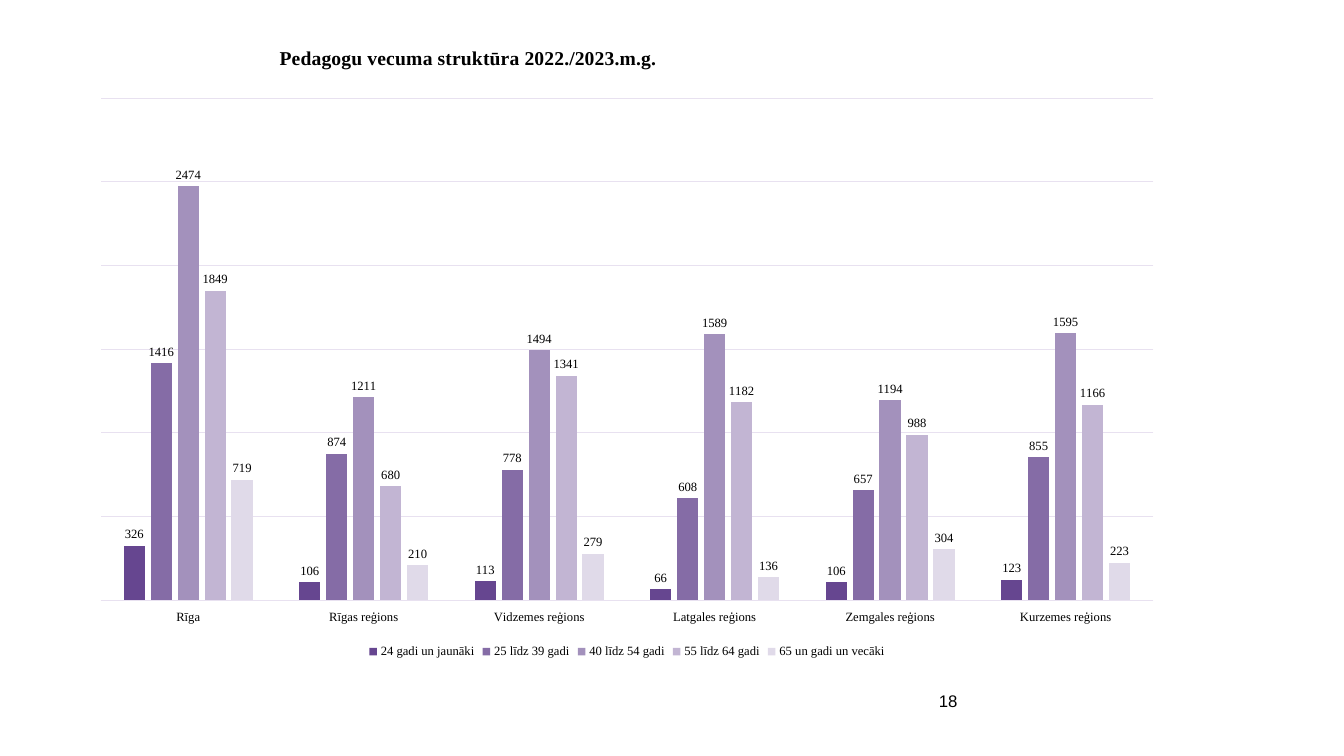
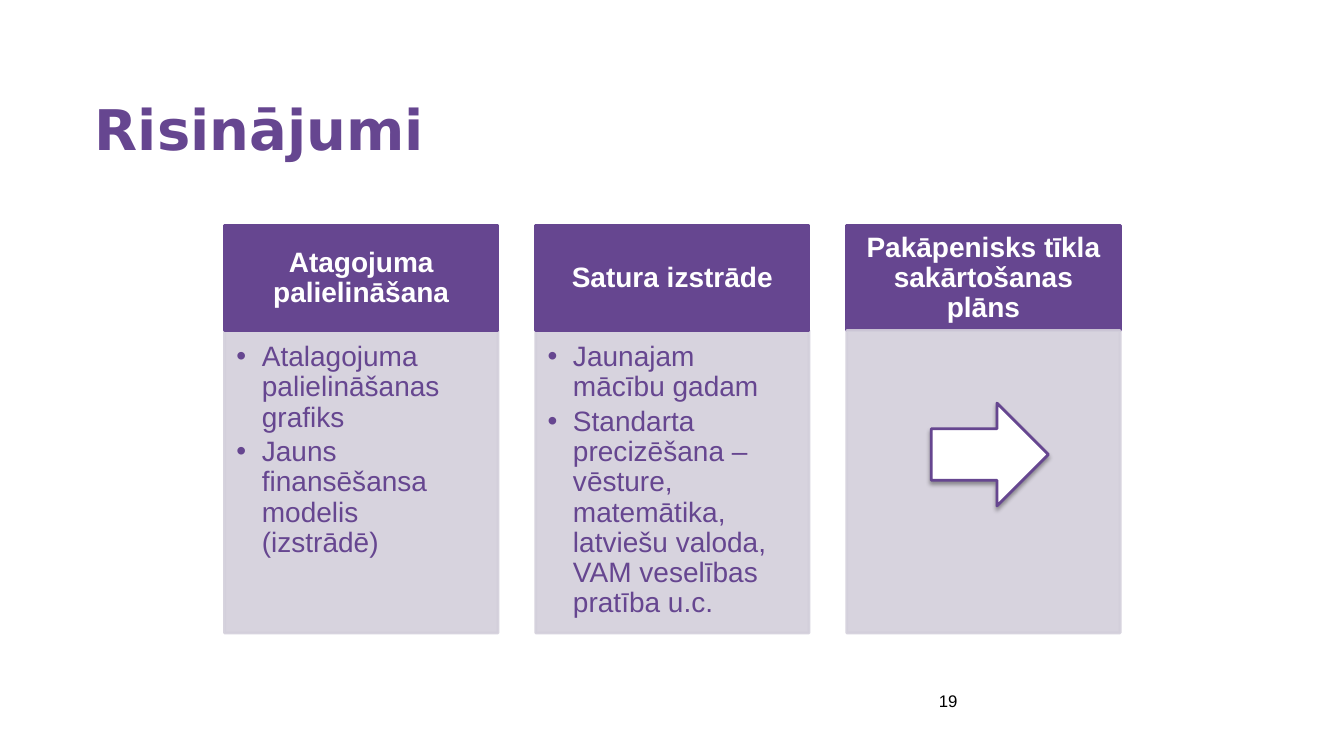
from dataclasses import dataclass

from lxml import etree
from pptx import Presentation
from pptx.chart.data import CategoryChartData
from pptx.dml.color import RGBColor
from pptx.enum.chart import XL_CHART_TYPE as ChartType
from pptx.enum.chart import XL_LABEL_POSITION as LabelPosition
from pptx.enum.chart import XL_LEGEND_POSITION as LegendPosition
from pptx.enum.chart import XL_TICK_LABEL_POSITION as TickLabels
from pptx.enum.chart import XL_TICK_MARK as TickMark
from pptx.enum.shapes import MSO_SHAPE as Shape
from pptx.enum.text import MSO_ANCHOR as Anchor
from pptx.enum.text import MSO_AUTO_SIZE as AutoSize
from pptx.enum.text import PP_ALIGN as Align
from pptx.oxml import parse_xml
from pptx.oxml.ns import qn
from pptx.util import Cm, Pt


@dataclass(frozen=True)
class Theme:
    purple: RGBColor = RGBColor.from_string("664690")
    panel: RGBColor = RGBColor.from_string("D3CFDB")
    grid: RGBColor = RGBColor.from_string("E8E1F0")
    black: RGBColor = RGBColor.from_string("000000")
    white: RGBColor = RGBColor.from_string("FFFFFF")
    bars: tuple = ("664690", "856CA6", "A391BC", "C2B5D3", "E0DAE9")
    title_font: str = "DejaVu Sans"
    body_font: str = "Arial"
    chart_font: str = "Times New Roman"
    title_size: Pt = Pt(40)
    body_size: Pt = Pt(20)
    number_size: Pt = Pt(12)
    chart_title_size: Pt = Pt(14)
    chart_size: Pt = Pt(9)
    outline: Pt = Pt(2)
    hairline: Pt = Pt(0.75)


theme = Theme()


def style_font(font, name, size, color, bold=False):
    font.name = name
    font.size = size
    font.bold = bold
    font.color.rgb = color


def set_layout(parent, position, **fields):
    for old in parent.findall(qn("c:layout")):
        parent.remove(old)
    layout = etree.Element(qn("c:layout"))
    manual = etree.SubElement(layout, qn("c:manualLayout"))
    for field, value in fields.items():
        etree.SubElement(manual, qn(f"c:{field}")).set("val", str(value))
    parent.insert(position, layout)


deck = Presentation()
deck.slide_width = Cm(33.87)
deck.slide_height = Cm(19.05)
chart_page = deck.slides.add_slide(deck.slide_layouts.get_by_name("Blank"))
solutions_page = deck.slides.add_slide(deck.slide_layouts.get_by_name("Two Content"))

regions = ["Rīga", "Rīgas reģions", "Vidzemes reģions", "Latgales reģions",
           "Zemgales reģions", "Kurzemes reģions"]
age_groups = {
    "24 gadi un jaunāki": (326, 106, 113, 66, 106, 123),
    "25 līdz 39 gadi": (1416, 874, 778, 608, 657, 855),
    "40 līdz 54 gadi": (2474, 1211, 1494, 1589, 1194, 1595),
    "55 līdz 64 gadi": (1849, 680, 1341, 1182, 988, 1166),
    "65 un gadi un vecāki": (719, 210, 279, 136, 304, 223),
}
chart_data = CategoryChartData()
chart_data.categories = regions
for age_group, counts in age_groups.items():
    chart_data.add_series(age_group, counts)

chart = chart_page.shapes.add_chart(
    ChartType.COLUMN_CLUSTERED, Cm(1.98), Cm(0.89), Cm(27.64), Cm(15.82), chart_data).chart
style_font(chart.font, theme.chart_font, theme.chart_size, theme.black)

chart.has_title = True
span = chart.chart_title.text_frame.paragraphs[0].add_run()
span.text = "Pedagogu vecuma struktūra 2022./2023.m.g."
style_font(span.font, theme.chart_font, theme.chart_title_size, theme.black, bold=True)
set_layout(chart.chart_title._element, 1, xMode="edge", yMode="edge", x=0.18, y=0.01)
set_layout(chart._chartSpace.chart.plotArea, 0, layoutTarget="inner",
           xMode="edge", yMode="edge", x=0.02, y=0.1, w=0.96, h=0.8)

plot = chart.plots[0]
plot.gap_width = 219
plot.overlap = -27
plot.vary_by_categories = False
for series, color in zip(plot.series, theme.bars):
    series.format.fill.solid()
    series.format.fill.fore_color.rgb = RGBColor.from_string(color)
    labels = series.data_labels
    labels.show_value = True
    labels.position = LabelPosition.OUTSIDE_END
    style_font(labels.font, theme.chart_font, theme.chart_size, theme.black)

counts_axis = chart.value_axis
counts_axis.minimum_scale = 0
counts_axis.maximum_scale = 3000
counts_axis.major_unit = 500
counts_axis.visible = False
regions_axis = chart.category_axis
regions_axis.major_tick_mark = TickMark.NONE
regions_axis.tick_label_position = TickLabels.LOW
style_font(regions_axis.tick_labels.font, theme.chart_font, theme.chart_size, theme.black)
for line in (counts_axis.major_gridlines.format.line, regions_axis.format.line):
    line.color.rgb = theme.grid
    line.width = theme.hairline

chart.has_legend = True
chart.legend.position = LegendPosition.BOTTOM
chart.legend.include_in_layout = False
style_font(chart.legend.font, theme.chart_font, theme.chart_size, theme.black)

title = solutions_page.shapes.title
title.left, title.top, title.width, title.height = Cm(2.39), Cm(2.57), Cm(21.79), Cm(1.45)
frame = title.text_frame
frame.auto_size = AutoSize.NONE
frame.vertical_anchor = Anchor.TOP
frame.margin_left = frame.margin_right = frame.margin_top = frame.margin_bottom = 0
para = frame.paragraphs[0]
para.alignment = Align.LEFT
para.line_spacing = 0.9
span = para.add_run()
span.text = "Risinājumi"
style_font(span.font, theme.title_font, theme.title_size, theme.purple, bold=True)

columns = [
    ("Atagojuma palielināšana",
     ["Atalagojuma palielināšanas grafiks", "Jauns finansēšansa modelis (izstrādē)"]),
    ("Satura izstrāde",
     ["Jaunajam mācību gadam",
      "Standarta precizēšana – vēsture, matemātika, latviešu valoda, "
      "VAM veselības pratība u.c."]),
    ("Pakāpenisks tīkla sakārtošanas plāns", []),
]
column_left, column_pitch, column_width = 5.66, 7.84, 6.89
header_top, header_height, panel_height = 5.69, 2.64, 7.62
panel_top = header_top + header_height

for index, (heading, points) in enumerate(columns):
    left = Cm(column_left + index * column_pitch)
    header = solutions_page.shapes.add_shape(
        Shape.RECTANGLE, left, Cm(header_top), Cm(column_width), Cm(header_height))
    header.shadow.inherit = False
    header.fill.solid()
    header.fill.fore_color.rgb = theme.purple
    header.line.color.rgb = theme.purple
    header.line.width = theme.outline
    frame = header.text_frame
    frame.word_wrap = True
    frame.vertical_anchor = Anchor.MIDDLE
    frame.margin_left = frame.margin_right = Cm(0.4)
    frame.margin_top = frame.margin_bottom = Cm(0.23)
    para = frame.paragraphs[0]
    para.alignment = Align.CENTER
    para.line_spacing = 0.9
    span = para.add_run()
    span.text = heading
    style_font(span.font, theme.body_font, theme.body_size, theme.white, bold=True)

    panel_area = left, Cm(panel_top), Cm(column_width), Cm(panel_height)
    if points:
        panel = solutions_page.placeholders[index + 1]
        panel.left, panel.top, panel.width, panel.height = panel_area
    else:
        panel = solutions_page.shapes.add_shape(Shape.RECTANGLE, *panel_area)
        panel.shadow.inherit = False
    panel.fill.solid()
    panel.fill.fore_color.rgb = theme.panel
    panel.line.color.rgb = theme.panel
    panel.line.width = theme.outline
    for color in panel._element.spPr.iter(qn("a:srgbClr")):
        etree.SubElement(color, qn("a:alpha")).set("val", "90000")

    frame = panel.text_frame
    frame.auto_size = AutoSize.NONE
    frame.margin_left = frame.margin_top = Cm(0.3)
    frame.margin_right = Cm(0.4)
    frame.margin_bottom = Cm(0.43)
    for number, point in enumerate(points):
        para = frame.add_paragraph() if number else frame.paragraphs[0]
        properties = para._p.get_or_add_pPr()
        properties.set("marL", str(Cm(0.64)))
        properties.set("indent", str(-Cm(0.64)))
        para.line_spacing = 0.9
        para.space_before = Pt(0)
        para.space_after = Pt(3)
        span = para.add_run()
        span.text = point
        style_font(span.font, theme.body_font, theme.body_size, theme.purple)

arrow = solutions_page.shapes.add_shape(
    Shape.RIGHT_ARROW, Cm(23.47), Cm(10.16), Cm(2.95), Cm(2.59))
arrow.fill.solid()
arrow.fill.fore_color.rgb = theme.white
arrow.line.color.rgb = theme.purple
arrow.line.width = theme.outline
arrow._element.spPr.append(parse_xml(
    '<a:effectLst xmlns:a="http://schemas.openxmlformats.org/drawingml/2006/main">'
    f'<a:outerShdw blurRad="{Pt(3)}" dist="{Pt(1.8)}" dir="5400000" rotWithShape="0">'
    f'<a:srgbClr val="{theme.black}"><a:alpha val="35000"/></a:srgbClr>'
    '</a:outerShdw></a:effectLst>'))

for number, page in enumerate(deck.slides, start=18):
    box = page.shapes.add_textbox(Cm(16.36), Cm(17.15), Cm(7.9), Cm(1.02))
    frame = box.text_frame
    frame.word_wrap = True
    frame.vertical_anchor = Anchor.MIDDLE
    frame.margin_left = frame.margin_right = frame.margin_top = frame.margin_bottom = Cm(0.13)
    para = frame.paragraphs[0]
    para.alignment = Align.RIGHT
    span = para.add_run()
    span.text = str(number)
    style_font(span.font, theme.body_font, theme.number_size, theme.black)

deck.save("out.pptx")
